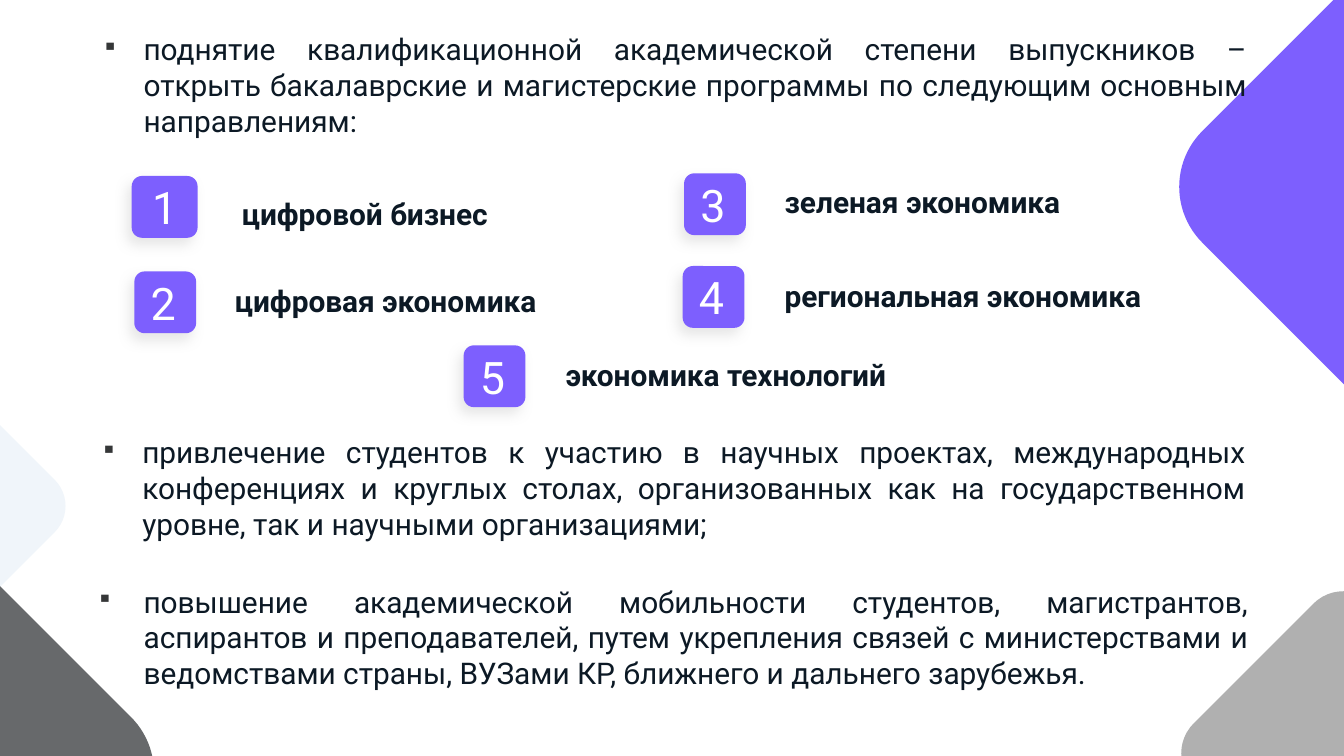
from lxml.etree import SubElement
from pptx import Presentation
from pptx.dml.color import RGBColor
from pptx.enum.shapes import MSO_SHAPE
from pptx.enum.text import MSO_ANCHOR, MSO_AUTO_SIZE, PP_ALIGN
from pptx.oxml import parse_xml
from pptx.oxml.ns import nsdecls, qn
from pptx.util import Inches, Pt

FONT = "Roboto"
WHITE = RGBColor(0xFF, 0xFF, 0xFF)
INK = RGBColor(0x0C, 0x19, 0x25)
VIOLET = RGBColor(0x7D, 0x5F, 0xFE)
SILVER = RGBColor(0xB0, 0xB0, 0xB0)
PALE = RGBColor(0xF0, 0xF5, 0xFA)
GRAPHITE = RGBColor(0x67, 0x69, 0x6B)
BULLET = RGBColor(0x35, 0x37, 0x38)

CORNERS = [
    (9.05, 4.66, 1.89, SILVER),
    (-1.39, 2.94, 1.65, PALE),
    (9.26, -0.37, 3.52, VIOLET),
    (-2.86, 3.99, 3.52, GRAPHITE),
]
PROGRAMS = [
    ("цифровой бизнес", (0.98, 1.31, 0.49, 0.46), (1.7, 1.41, 2.53, 0.41)),
    ("цифровая экономика", (1, 2.02, 0.46, 0.46), (1.65, 2.06, 2.68, 0.41)),
    ("зеленая экономика", (5.09, 1.29, 0.46, 0.46), (5.74, 1.32, 2.68, 0.41)),
    ("региональная экономика", (5.08, 1.98, 0.46, 0.46), (5.74, 2.02, 3.24, 0.41)),
    ("экономика технологий", (3.45, 2.57, 0.46, 0.46), (4.11, 2.61, 3.24, 0.41)),
]
GOALS = [
    ("поднятие квалификационной академической степени выпускников – открыть "
     "бакалаврские и магистерские программы по следующим основным направлениям:",
     (0.5, 0.13, 8.88, 0.95), 0.47, -0.31),
    ("привлечение студентов к участию в научных проектах, международных "
     "конференциях и круглых столах, организованных как на государственном "
     "уровне, так и научными организациями;",
     (0.49, 3.13, 8.88, 1.19), 0.47, -0.31),
    ("повышение академической мобильности студентов, магистрантов, аспирантов "
     "и преподавателей, путем укрепления связей с министерствами и ведомствами "
     "страны, ВУЗами КР, ближнего и дальнего зарубежья.",
     (0.47, 4.24, 8.92, 1.03), 0.5, -0.35),
]


def write(shape, text, size, color, anchor, align, bold=False):
    frame = shape.text_frame
    frame.word_wrap = True
    frame.auto_size = MSO_AUTO_SIZE.NONE
    frame.vertical_anchor = anchor
    frame.margin_left = frame.margin_right = Inches(0.1)
    frame.margin_top = frame.margin_bottom = Inches(0.1)
    para = frame.paragraphs[0]
    para.text = text
    para.alignment = align
    para.font.name = FONT
    para.font.size = Pt(size)
    para.font.bold = bold
    para.font.color.rgb = color
    return para


def add_tile(page, box, color):
    tile = page.shapes.add_shape(MSO_SHAPE.ROUNDED_RECTANGLE, *map(Inches, box))
    tile.shadow.inherit = False
    tile.fill.solid()
    tile.fill.fore_color.rgb = color
    tile.line.fill.background()
    return tile


def add_shadow(shape):
    effects = shape._element.spPr.find(qn("a:effectLst"))
    effects.append(parse_xml(
        f'<a:outerShdw {nsdecls("a")} blurRad="{Pt(6.8)}" dist="{Pt(4.5)}" '
        f'dir="{121 * 60000}" algn="bl" rotWithShape="0">'
        f'<a:srgbClr val="{SILVER}"><a:alpha val="30000"/></a:srgbClr></a:outerShdw>'))


def add_bullet(para, margin, indent):
    props = para._p.get_or_add_pPr()
    props.set("marL", str(Inches(margin)))
    props.set("indent", str(Inches(indent)))
    color = parse_xml(f'<a:buClr {nsdecls("a")}><a:srgbClr val="{BULLET}"/></a:buClr>')
    props.insert(0, color)
    size = SubElement(props, qn("a:buSzPct"), val="75000")
    mark = SubElement(props, qn("a:buChar"), char="▪")
    color.addnext(size)
    size.addnext(mark)


def place_title(page, box):
    title = page.shapes.title
    title.left, title.top, title.width, title.height = map(Inches, box)
    return title


def main():
    deck = Presentation()
    deck.slide_width = Inches(10)
    deck.slide_height = deck.slide_width * 9 // 16
    page = deck.slides.add_slide(deck.slide_layouts[5])

    for left, top, side, color in CORNERS:
        add_tile(page, (left, top, side, side), color).rotation = 315

    for number, (name, badge_box, label_box) in enumerate(PROGRAMS, 1):
        badge = add_tile(page, badge_box, VIOLET)
        add_shadow(badge)
        write(badge, str(number), 24, WHITE, MSO_ANCHOR.MIDDLE,
              PP_ALIGN.CENTER if number == 1 else PP_ALIGN.LEFT)
        if number == 1:
            label = place_title(page, label_box)
        else:
            label = page.shapes.add_textbox(*map(Inches, label_box))
        write(label, name, 16, INK, MSO_ANCHOR.BOTTOM,
              PP_ALIGN.LEFT if number == 1 else PP_ALIGN.JUSTIFY, bold=True)

    for text, box, margin, indent in GOALS:
        goal = page.shapes.add_textbox(*map(Inches, box))
        para = write(goal, text, 16, INK, MSO_ANCHOR.TOP, PP_ALIGN.JUSTIFY)
        add_bullet(para, margin, indent)

    deck.save("out.pptx")


if __name__ == "__main__":
    main()
